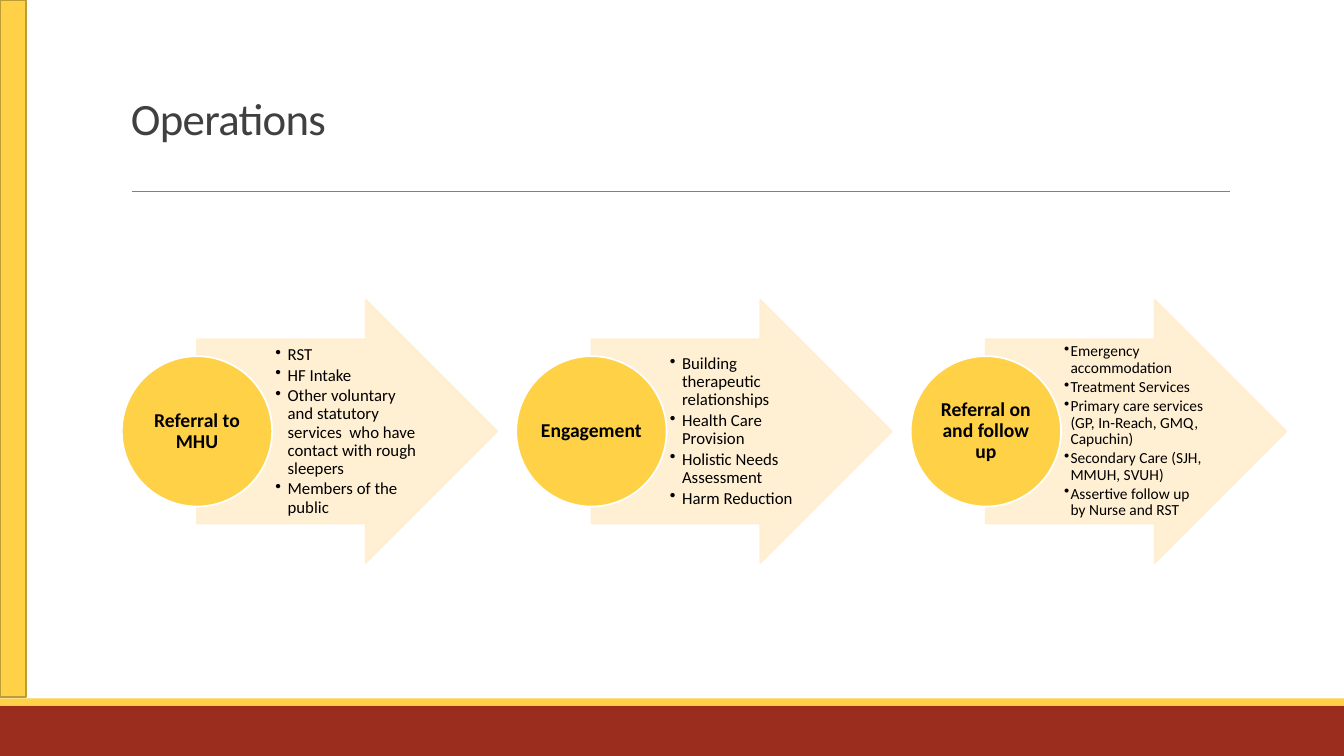
"""Builds the Operations slide: three stages from referral to follow up."""
from lxml import etree
from pptx import Presentation
from pptx.dml.color import RGBColor
from pptx.enum.shapes import MSO_CONNECTOR, MSO_SHAPE
from pptx.enum.text import MSO_ANCHOR, PP_ALIGN
from pptx.oxml.ns import qn
from pptx.util import Cm, Pt

RECTANGLE, ARROW, CIRCLE = MSO_SHAPE.RECTANGLE, MSO_SHAPE.RIGHT_ARROW, MSO_SHAPE.OVAL
STRAIGHT = MSO_CONNECTOR.STRAIGHT
MIDDLE, BOTTOM = MSO_ANCHOR.MIDDLE, MSO_ANCHOR.BOTTOM
LEFT, CENTER = PP_ALIGN.LEFT, PP_ALIGN.CENTER

TITLE = "Operations"
STAGES = [
    {"name": "Referral to MHU", "size": 12, "indent": 0.31, "points": [
        "RST",
        "HF Intake",
        "Other voluntary and statutory services  who have contact with rough sleepers",
        "Members of the public"]},
    {"name": "Engagement", "size": 12, "indent": 0.31, "points": [
        "Building therapeutic relationships",
        "Health Care Provision",
        "Holistic Needs Assessment",
        "Harm Reduction"]},
    {"name": "Referral on and follow up", "size": 11, "indent": 0.16, "points": [
        "Emergency accommodation",
        "Treatment Services",
        "Primary care services (GP, In-Reach, GMQ, Capuchin)",
        "Secondary Care (SJH, MMUH, SVUH)",
        "Assertive follow up by Nurse and RST"]},
]
COLORS = {"red": "9B2D1F", "yellow": "FFD147", "edge": "BD9B35", "cream": "FFEECF",
          "rule": "808080", "title": "404040", "text": "000000", "white": "FFFFFF"}
FONT = "Calibri"

SLIDE_W, SLIDE_H = 33.87, 19.05
FOOTER_H, STRIPE_H, SIDE_W = 1.27, 0.18, 0.66
FIRST_LEFT, STAGE_PITCH, CENTER_Y = 3.07, 9.94, 10.87
CIRCLE_D, LABEL_D = 3.79, 2.67
ARROW_W, ARROW_H = 7.57, 6.63
POINTS_W, POINTS_H = 3.68, 4.62


def rgb(name):
    return RGBColor.from_string(COLORS[name])


def add_block(slide, preset, box, fill, edge=None):
    block = slide.shapes.add_shape(preset, *map(Cm, box))
    block.shadow.inherit = False
    block.fill.solid()
    block.fill.fore_color.rgb = rgb(fill)
    if edge:
        block.line.color.rgb = rgb(edge)
        block.line.width = Pt(1.25)
    else:
        block.line.fill.background()
    return block


def make_translucent(block, percent):
    for color in block.element.spPr.iter(qn("a:srgbClr")):
        etree.SubElement(color, qn("a:alpha")).set("val", str(percent * 1000))


def add_text(slide, box, insets, anchor):
    frame = slide.shapes.add_textbox(*map(Cm, box)).text_frame
    frame.word_wrap = True
    frame.vertical_anchor = anchor
    (frame.margin_left, frame.margin_top,
     frame.margin_right, frame.margin_bottom) = map(Cm, insets)
    return frame


def write(paragraph, text, size, color="text", align=LEFT, spacing=0.9, bold=False):
    paragraph.alignment = align
    paragraph.line_spacing = spacing
    run = paragraph.add_run()
    run.text = text
    run.font.name = FONT
    run.font.size = Pt(size)
    run.font.bold = bold
    run.font.color.rgb = rgb(color)
    return run


def add_bullet(paragraph, indent):
    properties = paragraph._p.get_or_add_pPr()
    properties.set("marL", str(Cm(indent)))
    properties.set("indent", str(-Cm(indent)))
    etree.SubElement(properties, qn("a:buChar")).set("char", "•")


def add_frame(slide):
    footer_top = SLIDE_H - FOOTER_H
    stripe_top = footer_top - STRIPE_H
    add_block(slide, RECTANGLE, (0, footer_top, SLIDE_W, FOOTER_H), "red")
    add_block(slide, RECTANGLE, (0, stripe_top, SLIDE_W, STRIPE_H), "yellow")
    rule = slide.shapes.add_connector(STRAIGHT, Cm(3.33), Cm(4.82), Cm(31), Cm(4.82))
    rule.line.color.rgb = rgb("rule")
    rule.line.width = Pt(0.5)
    etree.SubElement(rule.element.spPr, qn("a:effectLst"))
    add_block(slide, RECTANGLE, (0, 0, SIDE_W, stripe_top - 0.03), "yellow", "edge")


def add_title(slide):
    frame = add_text(slide, (3.05, 0.79, 27.94, 4.03), (0.25, 0.13, 0.25, 1.3), BOTTOM)
    run = write(frame.paragraphs[0], TITLE, 32, "title", spacing=0.85)
    run.font._element.set("spc", "-50")


def add_stage(slide, left, stage):
    middle = left + CIRCLE_D / 2
    arrow = add_block(slide, ARROW, (middle, CENTER_Y - ARROW_H / 2, ARROW_W, ARROW_H),
                      "cream", "cream")
    arrow.adjustments[0], arrow.adjustments[1] = 0.7, 0.5
    make_translucent(arrow, 90)

    points = add_text(slide, (left + CIRCLE_D, CENTER_Y - POINTS_H / 2, POINTS_W, POINTS_H),
                      (0.08, 0.03, 0.05, 0.03), MIDDLE)
    for number, point in enumerate(stage["points"]):
        paragraph = points.add_paragraph() if number else points.paragraphs[0]
        paragraph.space_after = Pt(0.15 * stage["size"])
        write(paragraph, point, stage["size"])
        add_bullet(paragraph, stage["indent"])

    add_block(slide, CIRCLE, (left, CENTER_Y - CIRCLE_D / 2, CIRCLE_D, CIRCLE_D),
              "yellow", "white")
    label = add_text(slide, (middle - LABEL_D / 2, CENTER_Y - LABEL_D / 2, LABEL_D, LABEL_D),
                     (0.03,) * 4, MIDDLE)
    write(label.paragraphs[0], stage["name"], 14, align=CENTER, bold=True)


def main():
    deck = Presentation()
    deck.slide_width, deck.slide_height = Cm(SLIDE_W), Cm(SLIDE_H)
    slide = deck.slides.add_slide(deck.slide_layouts[6])
    add_frame(slide)
    add_title(slide)
    for number, stage in enumerate(STAGES):
        add_stage(slide, FIRST_LEFT + number * STAGE_PITCH, stage)
    deck.save("out.pptx")


if __name__ == "__main__":
    main()
